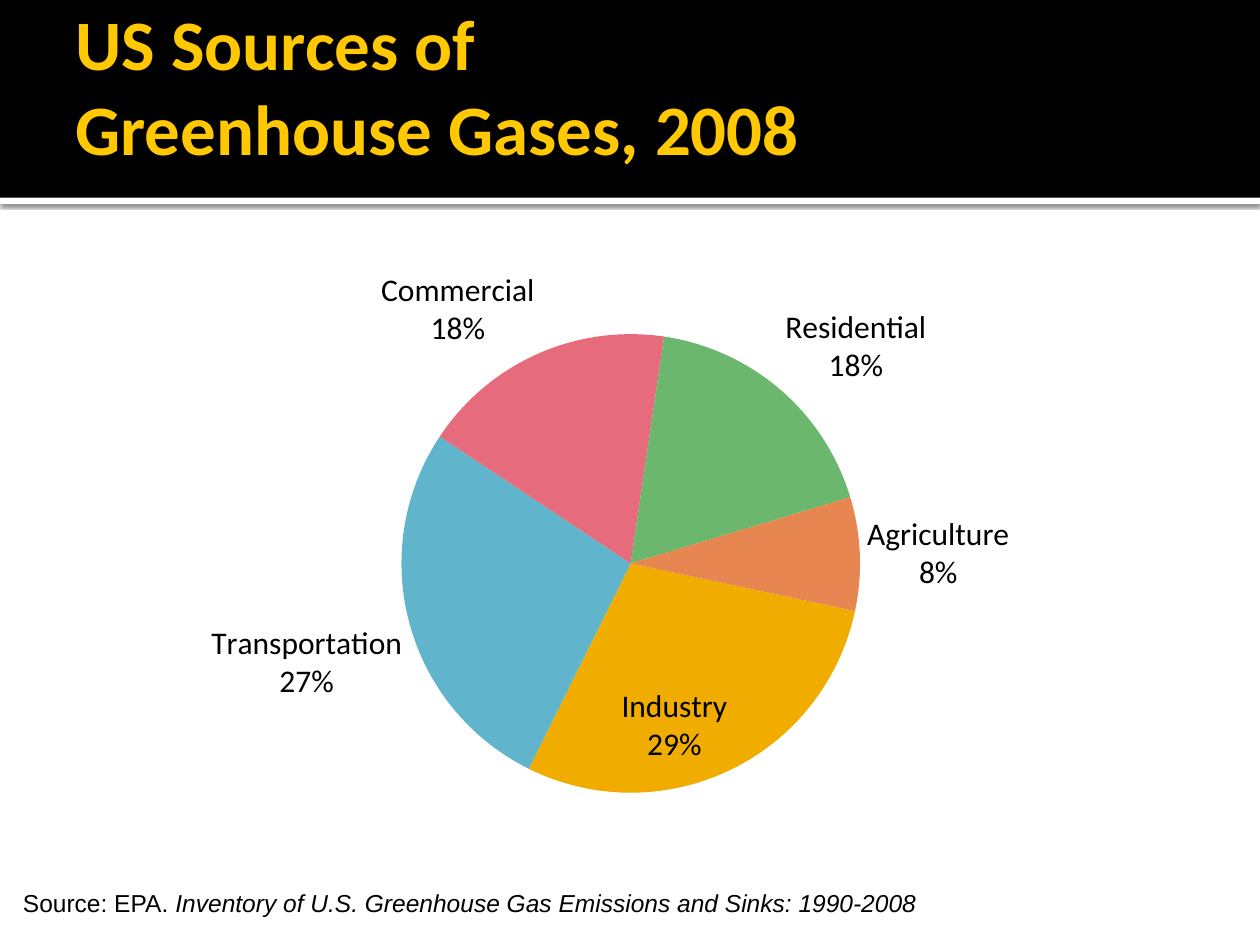
from copy import deepcopy
from dataclasses import dataclass

from pptx import Presentation
from pptx.chart.data import CategoryChartData
from pptx.dml.color import RGBColor
from pptx.enum.chart import XL_CHART_TYPE, XL_LABEL_POSITION
from pptx.enum.shapes import MSO_SHAPE
from pptx.enum.text import MSO_ANCHOR
from pptx.oxml import parse_xml
from pptx.oxml.ns import nsdecls, qn
from pptx.oxml.xmlchemy import OxmlElement
from pptx.util import Pt


@dataclass(frozen=True)
class Theme:
    black: str = "000000"
    white: str = "FFFFFF"
    title_color: str = "FFC800"
    heading_font: str = "Calibri"
    source_font: str = "Arial"
    title_size: float = 40.5
    label_size: float = 18
    source_size: float = 14


@dataclass(frozen=True)
class Box:
    left: float
    top: float
    width: float
    height: float

    def lengths(self) -> tuple:
        return Pt(self.left), Pt(self.top), Pt(self.width), Pt(self.height)


@dataclass(frozen=True)
class Sector:
    name: str
    share: int
    color: str


@dataclass(frozen=True)
class Band:
    box: Box
    color: str
    shadowed: bool


THEME = Theme()
SECTORS = [
    Sector("Industry", 29, "F0AD00"),
    Sector("Transportation", 27, "60B5CC"),
    Sector("Commercial", 18, "E66C7D"),
    Sector("Residential", 18, "6BB76D"),
    Sector("Agriculture", 8, "E88651"),
]
BANDS = [
    Band(Box(0, 113, 720, 3.6), THEME.white, True),
    Band(Box(0, 0, 720, 113), THEME.black, False),
]


def add_band(slide, band: Band) -> None:
    shape = slide.shapes.add_shape(MSO_SHAPE.RECTANGLE, *band.box.lengths())
    shape.shadow.inherit = False
    shape.fill.solid()
    shape.fill.fore_color.rgb = RGBColor.from_string(band.color)
    shape.line.fill.background()
    if band.shadowed:
        effects = shape._element.spPr.find(qn("a:effectLst"))
        effects.append(parse_xml(
            f'<a:outerShdw {nsdecls("a")} blurRad="{Pt(2.5)}" dist="{Pt(0.8)}" '
            f'dir="5400000" algn="tl" rotWithShape="0"><a:srgbClr val="{THEME.black}">'
            '<a:alpha val="60000"/></a:srgbClr></a:outerShdw>'))


def add_text(slide, text: list[tuple[str, bool]], *, box: Box, font: str, size: float,
             color: str, bold: bool = False, wrap: bool = True,
             anchor: MSO_ANCHOR = MSO_ANCHOR.TOP, right: float = 7.2,
             bottom: float = 3.6) -> None:
    frame = slide.shapes.add_textbox(*box.lengths()).text_frame
    frame.word_wrap = wrap
    frame.vertical_anchor = anchor
    frame.margin_right, frame.margin_bottom = Pt(right), Pt(bottom)
    paragraph = frame.paragraphs[0]
    for index, line in enumerate(text):
        content, italic = line
        for part, piece in enumerate(content.split("\n")):
            if part:
                paragraph.add_line_break()
            run = paragraph.add_run()
            run.text = piece
            run.font.name, run.font.size = font, Pt(size)
            run.font.bold, run.font.italic = bold, italic
            run.font.color.rgb = RGBColor.from_string(color)


def label_slices(series, inside_index: int) -> None:
    labels = series.data_labels
    labels.show_category_name = True
    labels.show_percentage = True
    labels.show_value = False
    labels.number_format = "0%"
    labels.number_format_is_linked = False
    labels.position = XL_LABEL_POSITION.OUTSIDE_END
    labels.font.name, labels.font.size = THEME.heading_font, Pt(THEME.label_size)
    labels.font.color.rgb = RGBColor.from_string(THEME.black)

    element = labels._element
    separator = OxmlElement("c:separator")
    separator.text = "\n"
    leader = element.find(qn("c:showLeaderLines"))
    if leader is None:
        element.append(separator)
    else:
        leader.addprevious(separator)

    inside = OxmlElement("c:dLbl")
    index = OxmlElement("c:idx")
    index.set("val", str(inside_index))
    inside.append(index)
    for child in element:
        if child.tag != qn("c:showLeaderLines"):
            inside.append(deepcopy(child))
    inside.find(qn("c:dLblPos")).set("val", "inEnd")
    element.insert(0, inside)


def add_pie(slide, sectors: list[Sector], box: Box) -> None:
    data = CategoryChartData()
    data.categories = [sector.name for sector in sectors]
    data.add_series("Series 1", [sector.share for sector in sectors])
    chart = slide.shapes.add_chart(XL_CHART_TYPE.PIE, *box.lengths(), data).chart
    chart.has_legend = False
    chart.has_title = False
    chart.font.name, chart.font.size = THEME.heading_font, Pt(THEME.label_size)
    chart.font.color.rgb = RGBColor.from_string(THEME.black)

    plot = chart.plots[0]
    plot.vary_by_categories = True
    series = plot.series[0]
    for index, sector in enumerate(sectors):
        fill = series.points[index].format.fill
        fill.solid()
        fill.fore_color.rgb = RGBColor.from_string(sector.color)
    label_slices(series, inside_index=0)

    pie = plot._element
    for old in pie.findall(qn("c:firstSliceAng")):
        pie.remove(old)
    angle = OxmlElement("c:firstSliceAng")
    angle.set("val", "102")
    pie.append(angle)

    area = pie.getparent()
    for old in area.findall(qn("c:layout")):
        area.remove(old)
    area.insert(0, parse_xml(
        f'<c:layout {nsdecls("c")}><c:manualLayout><c:layoutTarget val="inner"/>'
        '<c:xMode val="edge"/><c:yMode val="edge"/><c:x val="0.31"/><c:y val="0.14"/>'
        '<c:w val="0.42"/><c:h val="0.72"/></c:manualLayout></c:layout>'))


def main() -> None:
    presentation = Presentation()
    presentation.slide_width, presentation.slide_height = Pt(720), Pt(540)
    slide = presentation.slides.add_slide(presentation.slide_layouts[6])
    for band in BANDS:
        add_band(slide, band)
    add_text(slide, [("US Sources of\nGreenhouse Gases, 2008", False)],
             box=Box(36, 24, 648, 93), font=THEME.heading_font, size=THEME.title_size,
             color=THEME.title_color, bold=True, anchor=MSO_ANCHOR.MIDDLE,
             right=3.6, bottom=47.5)
    add_pie(slide, SECTORS, Box(36, 140, 624, 364))
    add_text(slide, [("Source: EPA. ", False),
                     ("Inventory of U.S. Greenhouse Gas Emissions and Sinks: 1990-2008", True)],
             box=Box(6, 504, 528, 24), font=THEME.source_font, size=THEME.source_size,
             color=THEME.black, wrap=False)
    presentation.save("out.pptx")


if __name__ == "__main__":
    main()
